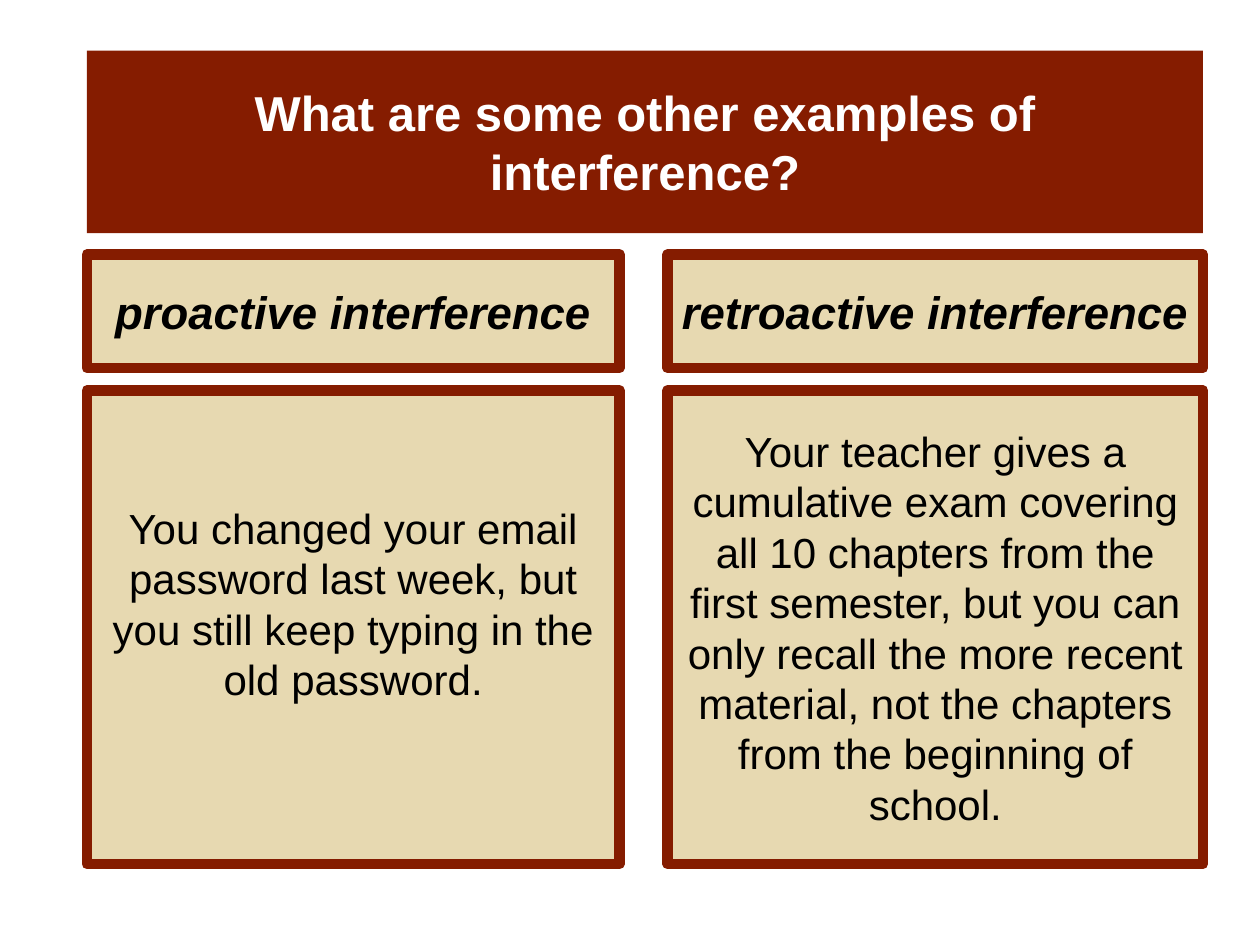
from pptx import Presentation
from pptx.dml.color import RGBColor
from pptx.enum.shapes import MSO_SHAPE
from pptx.enum.text import MSO_ANCHOR, PP_ALIGN
from pptx.util import Cm, Pt

FONT = "Arial"
MAROON, SAND, WHITE, BLACK = "851C00", "E7D9B1", "FFFFFF", "000000"

LEFT, WIDTH = 1.75, 22.5
COLUMN_TOP, COLUMN_HEIGHT = 5.13, 12.29
HEADING_HEIGHT, ROW_GAP = 2.29, 0.45

# Left edge, width, heading, example, bottom margin of the example
COLUMNS = [
    (LEFT, 10.74, "proactive interference",
     "You changed your email password last week, but you still keep typing "
     "in the old password.", 1.1),
    (13.46, 10.79, "retroactive interference",
     "Your teacher gives a cumulative exam covering all 10 chapters from the "
     "first semester, but you can only recall the more recent material, not "
     "the chapters from the beginning of school.", 0.13),
]


def color(hex_string):
    return RGBColor.from_string(hex_string)


def add_panel(slide, left, top, width, height, text, size, fill=SAND,
              border=MAROON, text_color=BLACK, bold=False, italic=False,
              bottom_margin=0.13):
    """Add a filled rectangle with centred text; lengths are in centimetres."""
    shape = slide.shapes.add_shape(
        MSO_SHAPE.RECTANGLE, Cm(left), Cm(top), Cm(width), Cm(height))
    shape.shadow.inherit = False
    shape.fill.solid()
    shape.fill.fore_color.rgb = color(fill)
    if border:
        shape.line.color.rgb = color(border)
        shape.line.width = Pt(6)
    else:
        shape.line.fill.background()

    text_frame = shape.text_frame
    text_frame.text = text
    text_frame.word_wrap = True
    text_frame.vertical_anchor = MSO_ANCHOR.MIDDLE
    text_frame.margin_bottom = Cm(bottom_margin)
    paragraph = text_frame.paragraphs[0]
    paragraph.alignment = PP_ALIGN.CENTER
    font = paragraph.runs[0].font
    font.name, font.size = FONT, Pt(size)
    font.bold, font.italic = bold, italic
    font.color.rgb = color(text_color)


def add_title(slide, left, top, width, height):
    add_panel(slide, left, top, width, height,
              "What are some other examples of interference?", 28,
              fill=MAROON, border=None, text_color=WHITE, bold=True)


def add_column(slide, left, top, width, height, heading, example, bottom_margin):
    """Stack a heading panel above a panel holding the example."""
    add_panel(slide, left, top, width, HEADING_HEIGHT, heading, 26,
              bold=True, italic=True)
    offset = HEADING_HEIGHT + ROW_GAP
    add_panel(slide, left, top + offset, width, height - offset, example, 24,
              bottom_margin=bottom_margin)


def main():
    presentation = Presentation()
    presentation.slide_width, presentation.slide_height = Cm(25.4), Cm(19.05)
    slide = presentation.slides.add_slide(presentation.slide_layouts[6])
    add_title(slide, LEFT, 1.02, WIDTH, 3.68)
    for left, width, heading, example, bottom_margin in COLUMNS:
        add_column(slide, left, COLUMN_TOP, width, COLUMN_HEIGHT,
                   heading, example, bottom_margin)
    presentation.save("out.pptx")


if __name__ == "__main__":
    main()
